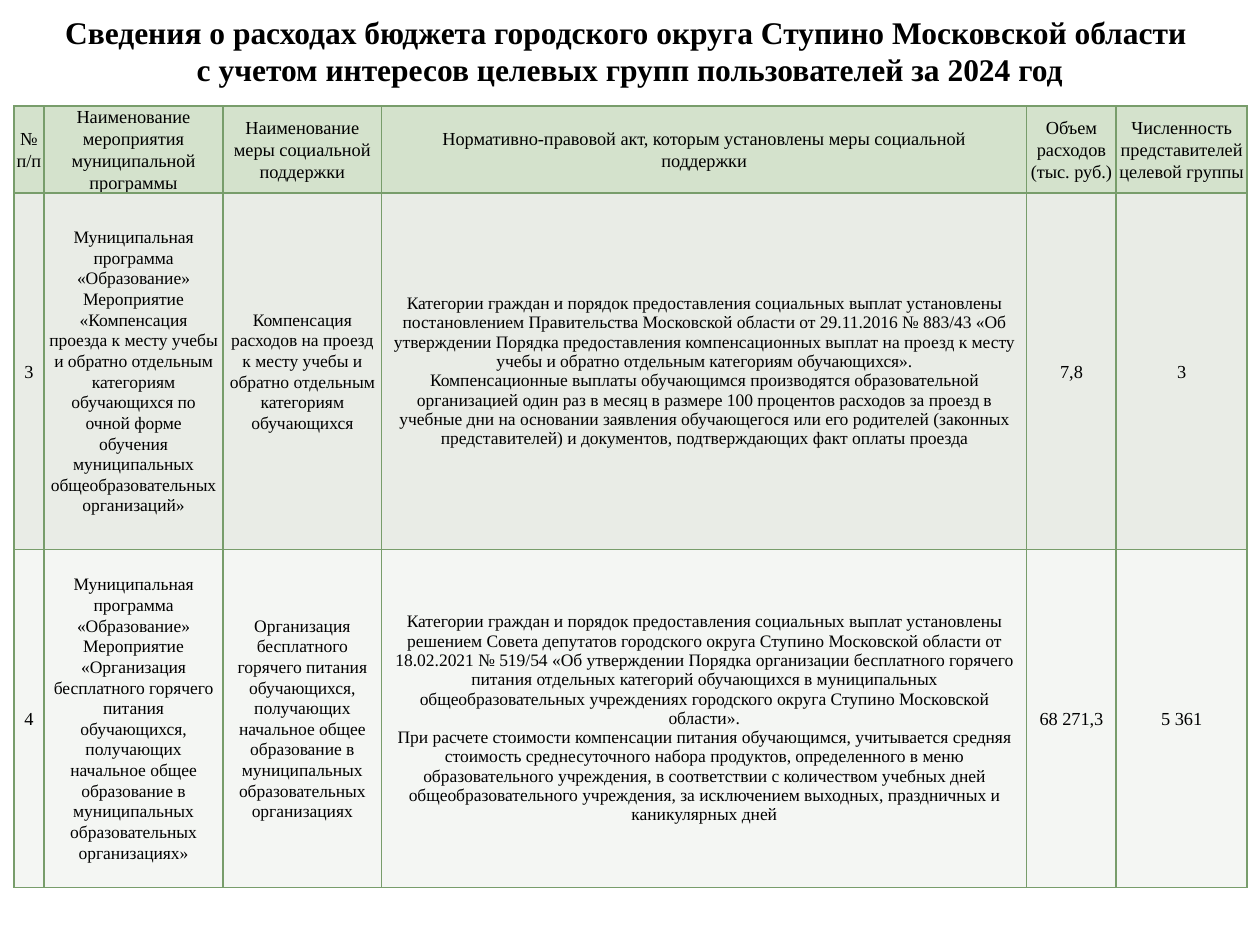
from dataclasses import dataclass

import pptx
import pptx.dml.color
import pptx.enum.text
import pptx.oxml
import pptx.oxml.ns
import pptx.util
from pptx.util import Inches

FONT = "Times New Roman"
COLORS = {
    "text": "000000",
    "border": "789D6B",
    "header": "C2D7B7",
    "odd": "E1E5DC",
    "even": "F0F3EE",
}
FILL_OPACITY = 70
BORDER_WIDTH = pptx.util.Pt(1)
COLUMN_WIDTHS = [0.24, 1.42, 1.26, 5.12, 0.71, 1.04]
LEGAL_ACT_COLUMN = 3
LARGE, MEDIUM = 10.5, 10
HEADER_SIZES = [LARGE] * 6
MEASURE_SIZES = [LARGE, MEDIUM, MEDIUM, MEDIUM, LARGE, LARGE]


@dataclass
class TableRow:
    height: float
    color: str
    side_margin: float
    sizes: list[float]
    legal_act_spacing: float
    texts: list[str]


TITLE = (
    "Сведения о расходах бюджета городского округа Ступино Московской области \n"
    "с учетом интересов целевых групп пользователей за 2024 год"
)

ROWS = [
    TableRow(0.63, "header", 0, HEADER_SIZES, 1.07, [
        "№ п/п",
        "Наименование мероприятия муниципальной программы",
        "Наименование меры социальной поддержки",
        "Нормативно-правовой акт, которым установлены меры социальной\nподдержки",
        "Объем расходов\n(тыс. руб.)",
        "Численность представителей целевой группы",
    ]),
    TableRow(2.83, "odd", 0.04, MEASURE_SIZES, 1.0, [
        "3",
        "Муниципальная программа «Образование»\n"
        "Мероприятие «Компенсация проезда к месту учебы и обратно отдельным "
        "категориям обучающихся по очной форме обучения муниципальных "
        "общеобразовательных организаций»",
        "Компенсация расходов на проезд к месту учебы и обратно отдельным "
        "категориям обучающихся",
        "Категории граждан и порядок предоставления социальных выплат установлены "
        "постановлением Правительства Московской области от 29.11.2016 № 883/43 "
        "«Об утверждении Порядка предоставления компенсационных выплат на проезд "
        "к месту учебы и обратно отдельным категориям обучающихся».\n"
        "Компенсационные выплаты обучающимся производятся образовательной "
        "организацией один раз в месяц в размере 100 процентов расходов за проезд "
        "в учебные дни на основании заявления обучающегося или его родителей "
        "(законных представителей) и документов, подтверждающих факт оплаты проезда",
        "7,8",
        "3",
    ]),
    TableRow(2.68, "even", 0.04, MEASURE_SIZES, 1.0, [
        "4",
        "Муниципальная программа «Образование»\n"
        "Мероприятие «Организация бесплатного горячего питания обучающихся, "
        "получающих начальное общее образование в муниципальных образовательных "
        "организациях»",
        "Организация бесплатного горячего питания обучающихся, получающих начальное "
        "общее образование в муниципальных образовательных организациях",
        "Категории граждан и порядок предоставления социальных выплат установлены "
        "решением Совета депутатов городского округа Ступино Московской области от "
        "18.02.2021 № 519/54 «Об утверждении Порядка организации бесплатного "
        "горячего питания отдельных категорий обучающихся в муниципальных "
        "общеобразовательных учреждениях городского округа Ступино Московской "
        "области».\n"
        "При расчете стоимости компенсации питания обучающимся, учитывается средняя "
        "стоимость среднесуточного набора продуктов, определенного в меню "
        "образовательного учреждения, в соответствии с количеством учебных дней "
        "общеобразовательного учреждения, за исключением выходных, праздничных и "
        "каникулярных дней",
        "68 271,3",
        "5 361",
    ]),
]


def write_text(frame, text: str, size: float, spacing: float = 1.0, bold: bool = False) -> None:
    frame.text = text
    for paragraph in frame.paragraphs:
        paragraph.alignment = pptx.enum.text.PP_ALIGN.CENTER
        paragraph.line_spacing = spacing
        for run in paragraph.runs:
            run.font.name = FONT
            run.font.size = pptx.util.Pt(size)
            run.font.bold = bold
            run.font.color.rgb = pptx.dml.color.RGBColor.from_string(COLORS["text"])


def draw_borders(cell) -> None:
    properties = cell._tc.get_or_add_tcPr()
    for side in ("lnL", "lnR", "lnT", "lnB"):
        properties.append(pptx.oxml.parse_xml(
            f'<a:{side} {pptx.oxml.ns.nsdecls("a")} w="{BORDER_WIDTH}"><a:solidFill>'
            f'<a:srgbClr val="{COLORS["border"]}"/></a:solidFill></a:{side}>'
        ))


def fill_cell(cell, color: str) -> None:
    cell.fill.solid()
    cell.fill.fore_color.rgb = pptx.dml.color.RGBColor.from_string(COLORS[color])
    tint = cell._tc.tcPr.find(pptx.oxml.ns.qn("a:solidFill"))[0]
    tint.append(pptx.oxml.parse_xml(
        f'<a:alpha {pptx.oxml.ns.nsdecls("a")} val="{FILL_OPACITY * 1000}"/>'
    ))


def draw_row(table, index: int, row: TableRow) -> None:
    table.rows[index].height = Inches(row.height)
    for column, (text, size) in enumerate(zip(row.texts, row.sizes)):
        cell = table.cell(index, column)
        cell.margin_left = cell.margin_right = Inches(row.side_margin)
        cell.margin_top = cell.margin_bottom = 0
        cell.vertical_anchor = pptx.enum.text.MSO_ANCHOR.MIDDLE
        spacing = row.legal_act_spacing if column == LEGAL_ACT_COLUMN else 1.07
        write_text(cell.text_frame, text, size, spacing)
        draw_borders(cell)
        fill_cell(cell, row.color)


def draw_expenses(slide) -> None:
    table = slide.shapes.add_table(
        len(ROWS), len(COLUMN_WIDTHS), Inches(0.11), Inches(0.84),
        Inches(sum(COLUMN_WIDTHS)), Inches(sum(row.height for row in ROWS)),
    ).table
    for column, width in zip(table.columns, COLUMN_WIDTHS):
        column.width = Inches(width)
    for index, row in enumerate(ROWS):
        draw_row(table, index, row)


def draw_title(slide) -> None:
    title = slide.shapes.add_textbox(0, Inches(0.05), Inches(10), Inches(0.71))
    title.text_frame.word_wrap = True
    title.text_frame.auto_size = pptx.enum.text.MSO_AUTO_SIZE.SHAPE_TO_FIT_TEXT
    write_text(title.text_frame, TITLE, 18, bold=True)


def main() -> None:
    presentation = pptx.Presentation()
    presentation.slide_width = Inches(10)
    presentation.slide_height = Inches(7.5)
    slide = presentation.slides.add_slide(presentation.slide_layouts[6])
    draw_expenses(slide)
    draw_title(slide)
    presentation.save("out.pptx")


if __name__ == "__main__":
    main()
